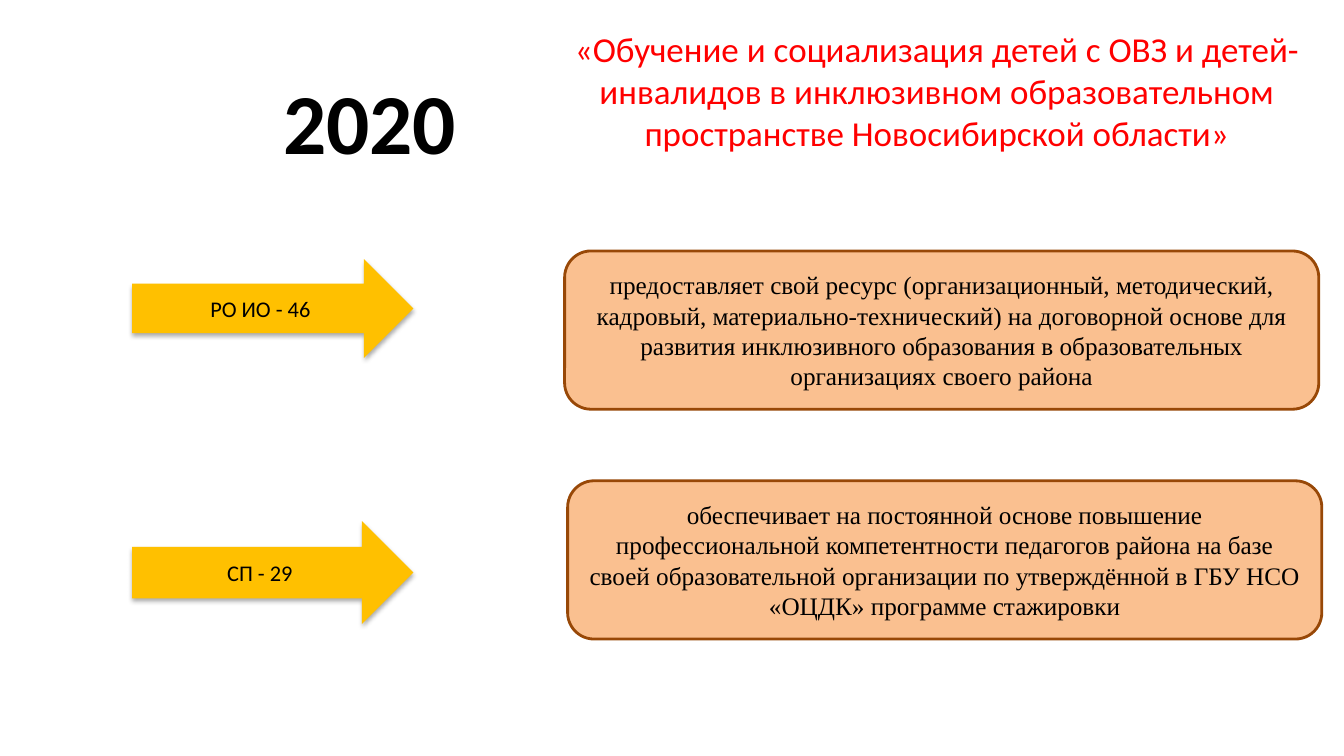
from lxml import etree
from pptx import Presentation
from pptx.dml.color import RGBColor
from pptx.enum import shapes, text
from pptx.oxml.ns import qn
from pptx.util import Inches, Pt

BLACK = RGBColor(0x00, 0x00, 0x00)
RED = RGBColor(0xFF, 0x00, 0x00)
GOLD = RGBColor(0xFF, 0xC0, 0x00)
PEACH = RGBColor(0xFA, 0xC0, 0x90)
BROWN = RGBColor(0x98, 0x48, 0x07)

LEFT, MIDDLE = text.PP_ALIGN.LEFT, text.MSO_ANCHOR.MIDDLE
CENTER, TOP = text.PP_ALIGN.CENTER, text.MSO_ANCHOR.TOP

TITLE = ("«Обучение и социализация детей с ОВЗ и детей-инвалидов в инклюзивном "
         "образовательном пространстве Новосибирской области»")

# Arrow label, arrow top and height, box left and top, box text
ROWS = [
    ("РО ИО - 46", 2.57, 0.98, 5.6, 2.49,
     "предоставляет свой ресурс (организационный, методический, кадровый, "
     "материально-технический) на договорной основе для развития инклюзивного "
     "образования в образовательных организациях своего района"),
    ("СП - 29", 5.17, 1.02, 5.63, 4.77,
     "обеспечивает на постоянной основе повышение профессиональной "
     "компетентности педагогов района на базе своей образовательной организации "
     "по утверждённой в ГБУ НСО «ОЦДК» программе стажировки"),
]


def write(shape, words, size, color=BLACK, face="Calibri", bold=False,
          align=CENTER, anchor=MIDDLE):
    frame = shape.text_frame
    frame.text = words
    frame.word_wrap = True
    frame.auto_size = text.MSO_AUTO_SIZE.NONE
    frame.vertical_anchor = anchor
    frame.margin_left = frame.margin_right = Inches(0.11)
    frame.margin_top = frame.margin_bottom = Inches(0.06)
    para = frame.paragraphs[0]
    para.alignment = align
    font = para.runs[0].font
    font.name, font.size, font.bold = face, Pt(size), bold
    font.color.rgb = color


def block(slide, kind, place, fill):
    shape = slide.shapes.add_shape(kind, *map(Inches, place))
    shape.shadow.inherit = False
    shape.fill.solid()
    shape.fill.fore_color.rgb = fill
    return shape


def shade(shape):
    effects = shape._element.spPr.find(qn("a:effectLst"))
    outer = etree.SubElement(effects, qn("a:outerShdw"), blurRad=str(Pt(3.5)),
                             dist=str(Pt(2.2)), dir="5400000", rotWithShape="0")
    color = etree.SubElement(outer, qn("a:srgbClr"), val="000000")
    etree.SubElement(color, qn("a:alpha"), val="32000")


def arrow(slide, label, top, height):
    shape = block(slide, shapes.MSO_SHAPE.RIGHT_ARROW,
                  (1.31, top, 2.79, height), GOLD)
    shape.line.fill.background()
    shade(shape)
    write(shape, label, 16)


def box(slide, left, top, words):
    shape = block(slide, shapes.MSO_SHAPE.ROUNDED_RECTANGLE,
                  (left, top, 7.48, 1.57), PEACH)
    shape.line.color.rgb = BROWN
    shape.line.width = Pt(2)
    write(shape, words, 18, face="Times New Roman")


def main():
    deck = Presentation()
    deck.slide_width, deck.slide_height = Inches(13.33), Inches(7.5)
    slide = deck.slides.add_slide(deck.slide_layouts[5])

    # Heading and year
    title = slide.shapes.title
    title.left, title.top = Inches(5.5), Inches(0.21)
    title.width, title.height = Inches(7.58), Inches(1.44)
    write(title, TITLE, 25, RED, anchor=TOP)
    year = slide.shapes.add_textbox(*map(Inches, (2.7, 0.63, 2.3, 1.14)))
    write(year, "2020", 61, bold=True, align=LEFT, anchor=TOP)

    # Each kind of site with its role
    for label, top, height, left, level, words in ROWS:
        arrow(slide, label, top, height)
        box(slide, left, level, words)

    deck.save("out.pptx")


if __name__ == "__main__":
    main()
